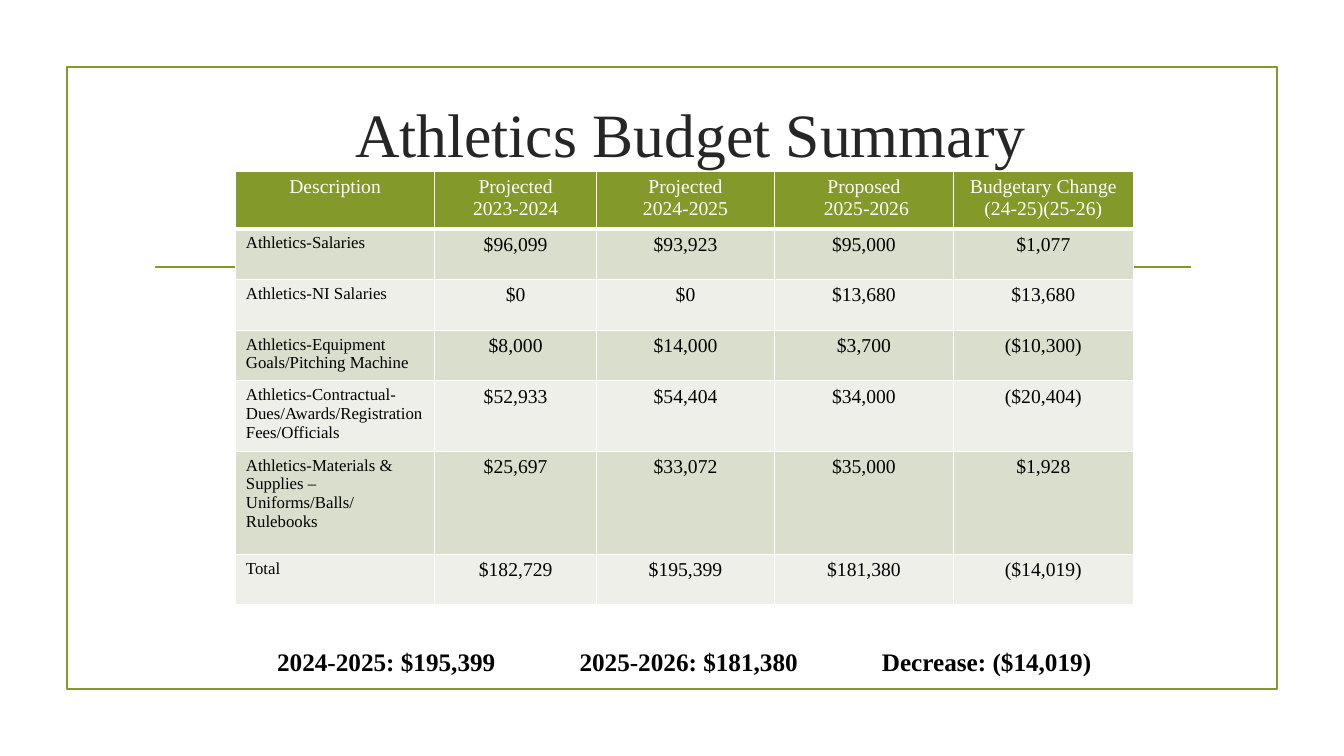
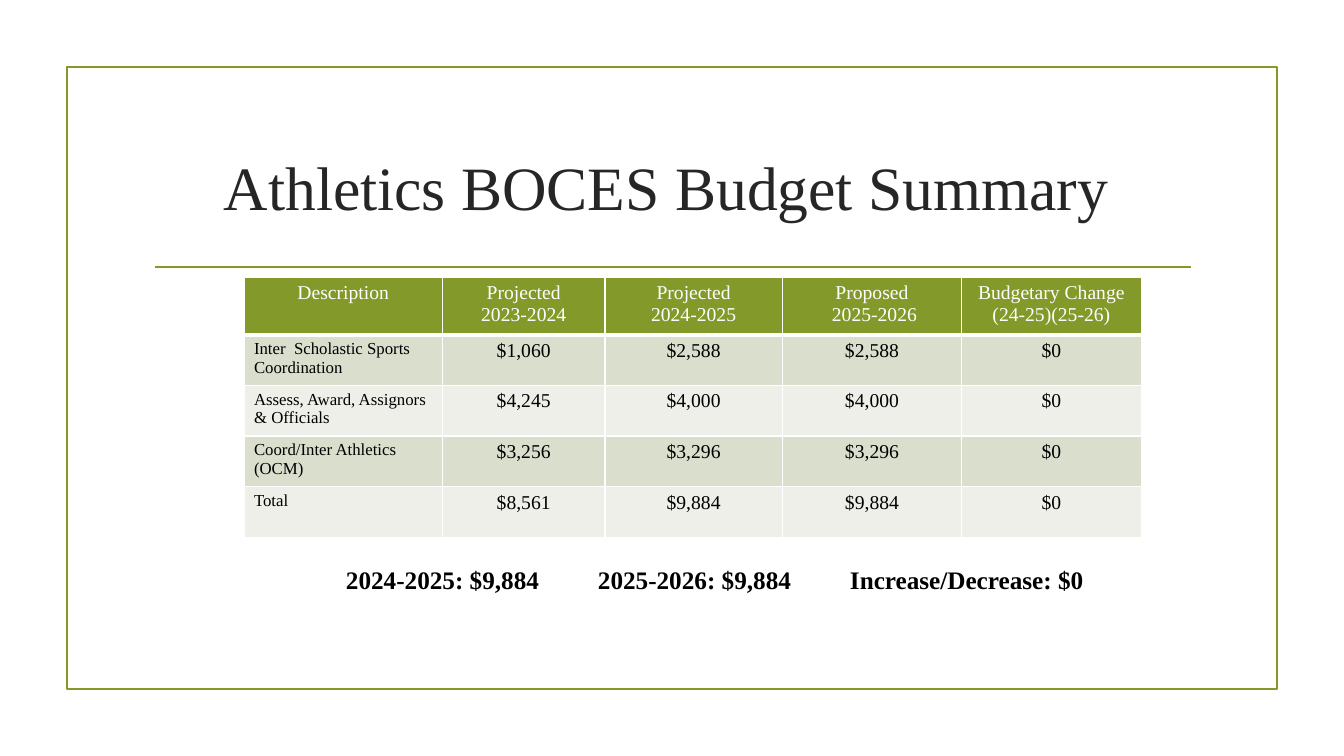
from lxml.etree import SubElement as Sub
from pptx import Presentation
from pptx.dml.color import RGBColor as RGB
from pptx.enum.shapes import MSO_CONNECTOR as Link, MSO_SHAPE as Form
from pptx.enum.text import MSO_ANCHOR as Anchor, PP_ALIGN as Align
from pptx.oxml.ns import qn
from pptx.util import Emu, Inches, Pt

GREEN = RGB(0x83, 0x99, 0x2A)
SAGE = RGB(0xD9, 0xDE, 0xCD)
MIST = RGB(0xED, 0xEF, 0xE8)
WHITE = RGB(0xFF, 0xFF, 0xFF)
BLACK = RGB(0, 0, 0)
DARK = RGB(0x26, 0x26, 0x26)
FONT = "Times New Roman"

# All lengths below are percent of the slide's width or height.
COLS = [14.78, 12.08, 13.2, 13.35, 13.35]
HEAD = ["Description", "Projected\n2023-2024", "Projected\n2024-2025",
        "Proposed\n 2025-2026", "Budgetary Change\n(24-25)(25-26)"]
PAGES = [
    dict(title="Athletics Budget Summary", spot=(12.5, 12.1),
         grid=(17.55, 22.67), high=[7.6, 6.7, 6.7, 6.7, 8.8, 13.6, 6.7],
         rows=[
             ["Athletics-Salaries", "$96,099", "$93,923", "$95,000", "$1,077"],
             ["Athletics-NI Salaries", "$0", "$0", "$13,680", "$13,680"],
             ["Athletics-Equipment\nGoals/Pitching Machine",
              "$8,000", "$14,000", "$3,700", "($10,300)"],
             ["Athletics-Contractual- Dues/Awards/Registration Fees/Officials",
              "$52,933", "$54,404", "$34,000", "($20,404)"],
             ["Athletics-Materials & Supplies – Uniforms/Balls/\nRulebooks",
              "$25,697", "$33,072", "$35,000", "$1,928"],
             ["Total", "$182,729", "$195,399", "$181,380", "($14,019)"]],
         sums=["2024-2025: $195,399", "2025-2026: $181,380",
               "Decrease: ($14,019)"],
         foot=(19.88, 84.8), step=22.5),
    dict(title="Athletics BOCES Budget Summary", spot=(10.7, 19.1),
         grid=(18.15, 36.67), high=[7.6] + [6.7] * 4,
         rows=[
             ["Inter  Scholastic Sports Coordination",
              "$1,060", "$2,588", "$2,588", "$0"],
             ["Assess, Award, Assignors & Officials",
              "$4,245", "$4,000", "$4,000", "$0"],
             ["Coord/Inter Athletics (OCM)",
              "$3,256", "$3,296", "$3,296", "$0"],
             ["Total", "$8,561", "$9,884", "$9,884", "$0"]],
         sums=["2024-2025: $9,884", "2025-2026: $9,884",
               "Increase/Decrease: $0"],
         foot=(25, 74), step=18.75),
]

deck = Presentation()
deck.slide_width, deck.slide_height = Inches(13.33), Inches(7.5)
WIDE, TALL = deck.slide_width / 100, deck.slide_height / 100


def at(*spans):
    """Turn percents, taken as x, y, x, y, into slide lengths."""
    return [Emu(int(s * (TALL if i % 2 else WIDE)))
            for i, s in enumerate(spans)]


def put(frame, text, size, color=BLACK, align=Align.LEFT, bold=False, tabs=()):
    """Fill a text frame, one paragraph a line, with tab stops in percent."""
    frame.word_wrap = True
    for i, line in enumerate(text.split("\n")):
        para = frame.add_paragraph() if i else frame.paragraphs[0]
        para.alignment = align
        if tabs:
            stops = Sub(para._p.get_or_add_pPr(), qn("a:tabLst"))
            for tab in tabs:
                Sub(stops, qn("a:tab"), pos=str(int(tab * WIDE)), algn="l")
        run = para.add_run()
        run.text = line
        font = run.font
        font.name, font.size, font.bold = FONT, Pt(size), bold
        font.color.rgb = color


for page in PAGES:
    slide = deck.slides.add_slide(deck.slide_layouts[6])
    shapes = slide.shapes

    frame = shapes.add_shape(Form.RECTANGLE, *at(5, 8.9, 90, 82.3))
    frame.shadow.inherit = False
    frame.fill.background()
    rule = shapes.add_connector(Link.STRAIGHT, *at(11.5, 35.3, 88.6, 35.3))
    Sub(rule._element.spPr, qn("a:effectLst"))
    for item in (frame, rule):
        item.line.color.rgb = GREEN
        item.line.width = Pt(1.25)

    title = shapes.add_textbox(*at(*page["spot"], 77.8, 11)).text_frame
    title.vertical_anchor = Anchor.MIDDLE
    put(title, page["title"], 44, DARK, Align.CENTER)

    rows, high = [HEAD] + page["rows"], page["high"]
    table = shapes.add_table(
        len(rows), len(COLS), *at(*page["grid"], sum(COLS), sum(high))).table
    for col, share in zip(table.columns, COLS):
        col.width = at(share)[0]
    for r, row in enumerate(rows):
        table.rows[r].height = at(0, high[r])[1]
        for c, text in enumerate(row):
            cell = table.cell(r, c)
            props = cell._tc.get_or_add_tcPr()
            for side in "LRTB":
                width = Pt(3 if r == 0 and side == "B" else 1)
                edge = Sub(props, qn(f"a:ln{side}"), w=str(width))
                paint = Sub(edge, qn("a:solidFill"))
                Sub(paint, qn("a:srgbClr"), val=str(WHITE))
            cell.fill.solid()
            cell.fill.fore_color.rgb = (
                GREEN if r == 0 else SAGE if r % 2 else MIST)
            label = r > 0 and c == 0
            put(cell.text_frame, text, 12 if label else 14,
                BLACK if r else WHITE, Align.LEFT if label else Align.CENTER)

    step = page["step"]
    foot = shapes.add_textbox(*at(*page["foot"], 64, 5.3)).text_frame
    put(foot, "\t".join(page["sums"]), 18, bold=True, tabs=(step, 2 * step))

deck.save("out.pptx")
